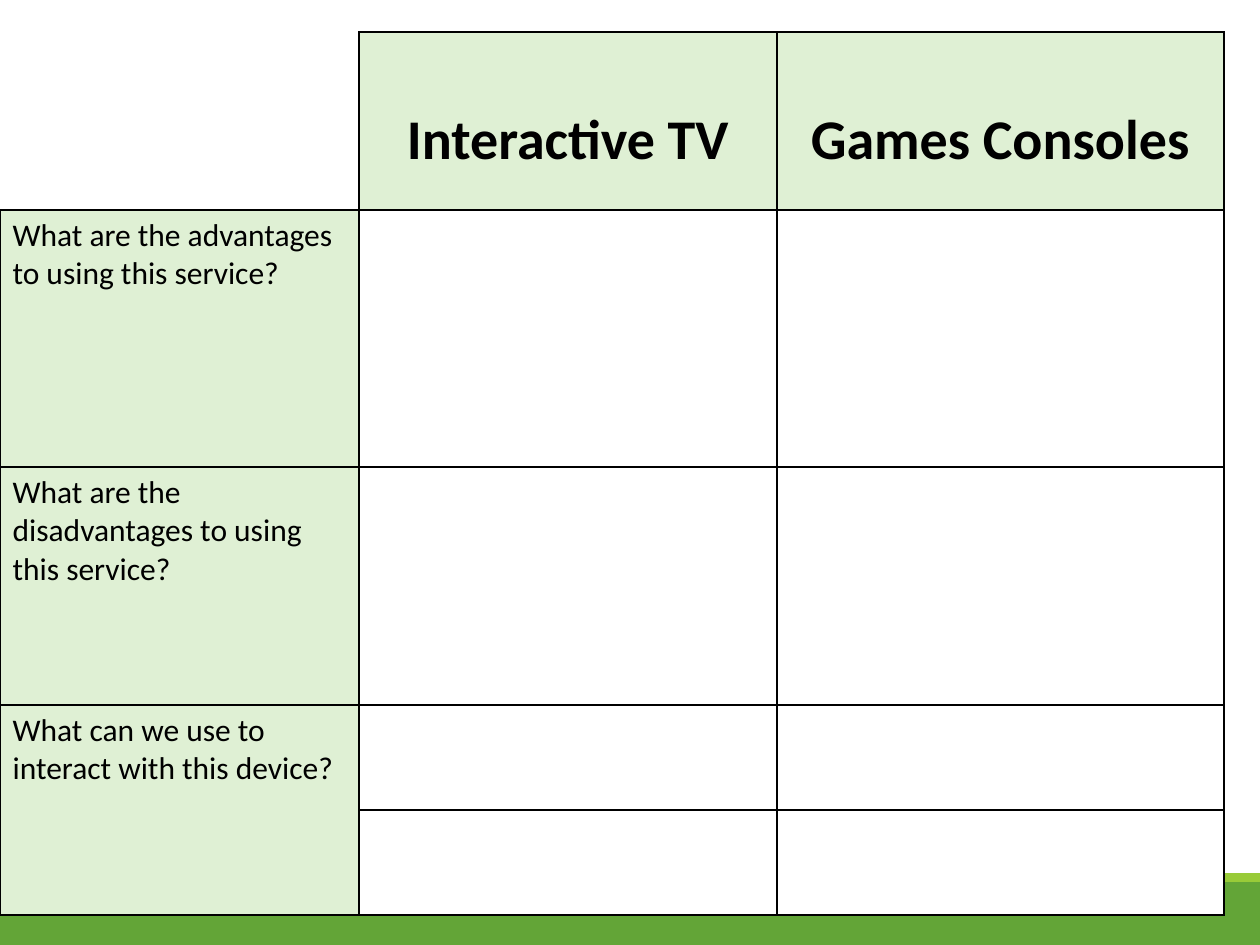
from typing import NamedTuple

from lxml.etree import SubElement
from pptx import Presentation
from pptx.dml.color import RGBColor
from pptx.enum.shapes import MSO_SHAPE as Shape
from pptx.enum.text import PP_ALIGN as Align
from pptx.oxml.ns import qn
from pptx.util import Emu, Pt

GREEN = RGBColor(0x63, 0xA5, 0x37)
LIME = RGBColor(0x99, 0xCB, 0x38)
PALE = RGBColor(0xDF, 0xF0, 0xD4)
WHITE = RGBColor(0xFF, 0xFF, 0xFF)
BLACK = RGBColor(0x00, 0x00, 0x00)
FONT = "Calibri"


class Band(NamedTuple):
    top: int
    height: int
    color: RGBColor


class Label(NamedTuple):
    row: int
    col: int
    text: str


WIDE, HIGH = 1260, 945
BANDS = [Band(882, 63, GREEN), Band(873, 9, LIME)]
TOP = 32
COLS = [359, 418, 447]
ROWS = [178, 257, 238, 105, 105]
HEADS = [Label(0, 1, "Interactive TV"), Label(0, 2, "Games Consoles")]
ASKS = [
    Label(1, 0, "What are the advantages to using this service?"),
    Label(2, 0, "What are the disadvantages to using this service?"),
    Label(3, 0, "What can we use to interact with this device?"),
]
HEAD_DROP = 74


def px(n: int) -> Emu:
    return Emu(round(n * 914400 / 126))


def draw_band(slide, band: Band) -> None:
    bar = slide.shapes.add_shape(
        Shape.RECTANGLE, 0, px(band.top), px(WIDE), px(band.height))
    bar.shadow.inherit = False
    bar.fill.solid()
    bar.fill.fore_color.rgb = band.color
    bar.line.fill.background()


def set_edges(cell, sides: str) -> None:
    """Rule the named sides (of L, R, T, B) in black and clear the rest."""
    props = cell._tc.get_or_add_tcPr()
    for side in "LRTB":
        line = SubElement(props, qn(f"a:ln{side}"), w=str(Pt(1)))
        if side in sides:
            fill = SubElement(line, qn("a:solidFill"))
            SubElement(fill, qn("a:srgbClr"), val=str(BLACK))
        else:
            SubElement(line, qn("a:noFill"))


def paint(cell, row: int, col: int) -> None:
    corner = row == col == 0
    set_edges(cell, "RB" if corner else "LRTB")
    if corner:
        cell.fill.background()
    else:
        cell.fill.solid()
        cell.fill.fore_color.rgb = PALE if row == 0 or col == 0 else WHITE


def write(cell, text: str, size: int, bold: bool, align: Align) -> None:
    cell.text = text
    para = cell.text_frame.paragraphs[0]
    para.alignment = align
    font = para.font
    font.name, font.size, font.bold = FONT, Pt(size), bold
    font.color.rgb = BLACK


def draw_table(slide) -> None:
    table = slide.shapes.add_table(
        len(ROWS), len(COLS), 0, px(TOP), px(sum(COLS)), px(sum(ROWS))).table
    table.first_row = table.horz_banding = False
    for col, width in zip(table.columns, COLS):
        col.width = px(width)
    for row, height in zip(table.rows, ROWS):
        row.height = px(height)
    for r in range(len(ROWS)):
        for c in range(len(COLS)):
            paint(table.cell(r, c), r, c)
    table.cell(3, 0).merge(table.cell(4, 0))
    for head in HEADS:
        cell = table.cell(head.row, head.col)
        cell.margin_top = px(HEAD_DROP)
        write(cell, head.text, 32, True, Align.CENTER)
    for ask in ASKS:
        write(table.cell(ask.row, ask.col), ask.text, 18, False, Align.LEFT)


def main() -> None:
    deck = Presentation()
    deck.slide_width, deck.slide_height = px(WIDE), px(HIGH)
    slide = deck.slides.add_slide(deck.slide_layouts[6])
    for band in BANDS:
        draw_band(slide, band)
    draw_table(slide)
    deck.save("out.pptx")


if __name__ == "__main__":
    main()
